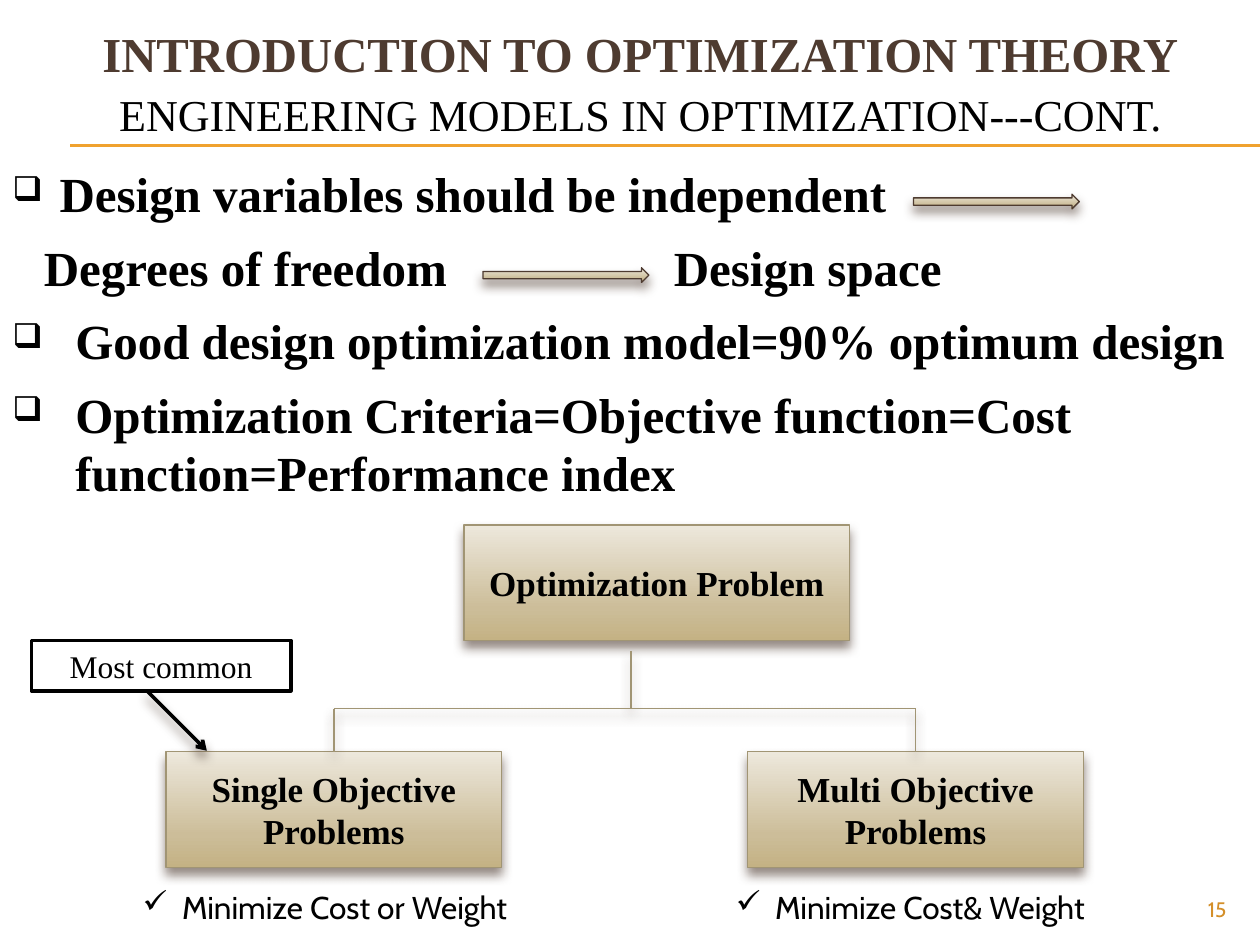
from copy import deepcopy
from dataclasses import dataclass

from pptx import Presentation
from pptx.dml.color import RGBColor
from pptx.enum.shapes import MSO_CONNECTOR, MSO_SHAPE
from pptx.enum.text import MSO_ANCHOR, MSO_AUTO_SIZE, PP_ALIGN
from pptx.oxml import parse_xml
from pptx.oxml.ns import nsdecls, qn
from pptx.util import Inches, Pt


@dataclass(frozen=True)
class Theme:
    serif: str = "Times New Roman"
    sans: str = "Cabin"
    ink: str = "000000"
    paper: str = "FFFFFF"
    brown: str = "4E3B30"
    amber: str = "F0A22E"
    page_number: str = "D48F29"
    box_line: str = "A19574"
    sand: tuple = ((0, "EDE8DC"), (0.72, "CCBD99"), (1, "C4B284"))
    title: float = 27.9
    subtitle: float = 25.2
    body: float = 28
    node: float = 20
    note: float = 18
    small: float = 12
    hairline: float = 0.75
    bold_line: float = 2


THEME = Theme()
CELL = Inches(10) / 120  # the slide is a grid of 120 columns by 90 rows


@dataclass(frozen=True)
class Box:
    """A rectangle in grid columns and rows."""
    left: float
    top: float
    width: float
    height: float

    def inner(self, left, top, width, height):
        return Box(self.left + left, self.top + top, width, height)

    def point(self, column, row):
        return self.left + column, self.top + row

    def lengths(self):
        return cells(self.left, self.top, self.width, self.height)


def cells(*counts):
    return [round(count * CELL) for count in counts]


def rgb(color):
    return RGBColor.from_string(color)


def write(frame, *lines, font=THEME.serif, size=THEME.body, color=THEME.ink, bold=False,
          align=PP_ALIGN.LEFT, anchor=MSO_ANCHOR.TOP, leading=None, grow=False,
          bullet=None, bullet_size=100, indent=0):
    """Fill a text frame; a line is a text or a (text, font overrides) pair."""
    frame.word_wrap = True
    frame.vertical_anchor = anchor
    frame.auto_size = MSO_AUTO_SIZE.SHAPE_TO_FIT_TEXT if grow else MSO_AUTO_SIZE.NONE
    for index, line in enumerate(lines):
        text, own = (line, {}) if isinstance(line, str) else line
        paragraph = frame.add_paragraph() if index else frame.paragraphs[0]
        paragraph.alignment = align
        paragraph.line_spacing = leading
        run = paragraph.add_run()
        run.text = text
        run.font.name = font
        run.font.size = Pt(own.get("size", size))
        run.font.bold = own.get("bold", bold)
        run.font.color.rgb = rgb(own.get("color", color))
        if bullet:
            props = paragraph._p.get_or_add_pPr()
            hang = cells(indent)[0]
            props.set("marL", str(hang))
            props.set("indent", str(-hang))
            for mark in (f'<a:buSzPct {nsdecls("a")} val="{bullet_size * 1000}"/>',
                         f'<a:buChar {nsdecls("a")} char="{bullet}"/>'):
                props.append(parse_xml(mark))


def add_text(slide, box, *lines, **style):
    write(slide.shapes.add_textbox(*box.lengths()).text_frame, *lines, **style)


def set_shadow(shape, visible=True):
    """Add the soft brown shadow, or an empty effect list; call after the line is set."""
    drop = (f'<a:outerShdw blurRad="{Pt(6)}" dist="{Pt(4)}" dir="5400000" rotWithShape="0">'
            f'<a:srgbClr val="{THEME.brown}"><a:alpha val="60000"/></a:srgbClr></a:outerShdw>')
    shape._element.spPr.append(parse_xml(
        f'<a:effectLst {nsdecls("a")}>{drop if visible else ""}</a:effectLst>'))


def add_line(slide, start, end, color=THEME.box_line, weight=THEME.hairline,
             shadow=True, arrow=False):
    line = slide.shapes.add_connector(MSO_CONNECTOR.STRAIGHT, *cells(*start, *end))
    line.line.color.rgb = rgb(color)
    line.line.width = Pt(weight)
    if arrow:
        line._element.spPr.find(qn("a:ln")).append(
            parse_xml(f'<a:tailEnd {nsdecls("a")} type="arrow"/>'))
    set_shadow(line, shadow)
    return line


def add_sand_shape(slide, kind, box, line_color):
    shape = slide.shapes.add_shape(kind, *box.lengths())
    shape.fill.gradient()
    shape.fill.gradient_angle = 270
    stops = shape._element.spPr.find(f'.//{qn("a:gsLst")}')
    stops.append(deepcopy(stops[0]))
    for stop, (position, color) in zip(shape.fill.gradient_stops, THEME.sand):
        stop.position = position
        stop.color.rgb = rgb(color)
    shape.line.color.rgb = rgb(line_color)
    shape.line.width = Pt(THEME.hairline)
    set_shadow(shape)
    return shape


def add_node(slide, box, label):
    node = add_sand_shape(slide, MSO_SHAPE.RECTANGLE, box, THEME.box_line)
    write(node.text_frame, label, size=THEME.node, bold=True,
          align=PP_ALIGN.CENTER, anchor=MSO_ANCHOR.MIDDLE)
    return node


def add_header(slide, box):
    for row in (13.8, 13.9):
        add_line(slide, box.point(6.7, row), box.point(box.width, row),
                 color=THEME.amber, shadow=False)
    add_text(slide, box.inner(4, 1, 114, 13), "INTRODUCTION TO OPTIMIZATION THEORY",
             ("ENGINEERING MODELS IN OPTIMIZATION---CONT.",
              {"size": THEME.subtitle, "bold": False, "color": THEME.ink}),
             size=THEME.title, bold=True, color=THEME.brown, leading=1.1,
             align=PP_ALIGN.CENTER, anchor=MSO_ANCHOR.MIDDLE)


def add_statements(slide, box):
    bulleted = (
        (0, 97, 4.5, "Design variables should be independent"),
        (14, 119, 6, "Good design optimization model=90% optimum design"),
        (21, 119, 6, "Optimization Criteria=Objective function=Cost function=Performance index"),
    )
    for row, width, indent, statement in bulleted:
        add_text(slide, box.inner(0, row, width, 7), statement, bold=True, grow=True,
                 bullet="❑", bullet_size=70, indent=indent)
    for column, width, term in ((3, 46.4, "Degrees of freedom"), (63, 33, "Design space")):
        add_text(slide, box.inner(column, 7, width, 7), term, bold=True, grow=True)
    for column, row in ((87, 3.5), (46, 10.5)):
        add_sand_shape(slide, MSO_SHAPE.RIGHT_ARROW, box.inner(column, row, 15.8, 1.4),
                       THEME.brown)


def add_problem_tree(slide, box):
    stem, bar_row, child_row = 60.1, 17.5, 21.6
    add_node(slide, box.inner(44.2, 0, 36.7, 11), "Optimization Problem")
    add_line(slide, box.point(stem, 12), box.point(stem, bar_row))
    add_line(slide, box.point(31.8, bar_row), box.point(87.2, bar_row))
    children = (
        (15.8, "Single Objective Problems", 12.4, 39, "Minimize Cost or Weight"),
        (71.2, "Multi Objective Problems", 68.9, 36.5, "Minimize Cost& Weight"),
    )
    for column, label, goal_column, goal_width, goal in children:
        child = add_node(slide, box.inner(column, child_row, 32, 11), label)
        middle = column + 16
        drop = add_line(slide, box.point(middle, bar_row), box.point(middle, child_row))
        drop.end_connect(child, 0)
        add_text(slide, box.inner(goal_column, 34, goal_width, 4.8), goal, font=THEME.sans,
                 size=THEME.note, bullet="✓", indent=3.75, grow=True)


def add_callout(slide, box):
    label = slide.shapes.add_shape(MSO_SHAPE.RECTANGLE,
                                   *box.inner(0, 0, box.width, 4.8).lengths())
    label.fill.solid()
    label.fill.fore_color.rgb = rgb(THEME.paper)
    label.line.color.rgb = rgb(THEME.ink)
    label.line.width = Pt(THEME.bold_line)
    label.shadow.inherit = False
    write(label.text_frame, "Most common", size=THEME.note, align=PP_ALIGN.CENTER, grow=True)
    add_line(slide, box.point(11, 4.8), box.point(16.7, box.height), color=THEME.ink,
             weight=THEME.bold_line, arrow=True)


def main():
    deck = Presentation()
    deck.slide_width, deck.slide_height = cells(120, 90)
    slide = deck.slides.add_slide(deck.slide_layouts[6])
    add_header(slide, Box(0, 0, 120, 14))
    add_statements(slide, Box(0, 15, 120, 34))
    add_problem_tree(slide, Box(0, 50, 120, 39))
    add_callout(slide, Box(3, 61, 24.7, 10.5))
    add_text(slide, Box(108, 85, 10, 3.2), "15", font=THEME.sans, size=THEME.small,
             color=THEME.page_number, align=PP_ALIGN.RIGHT, anchor=MSO_ANCHOR.MIDDLE)
    deck.save("out.pptx")


if __name__ == "__main__":
    main()
